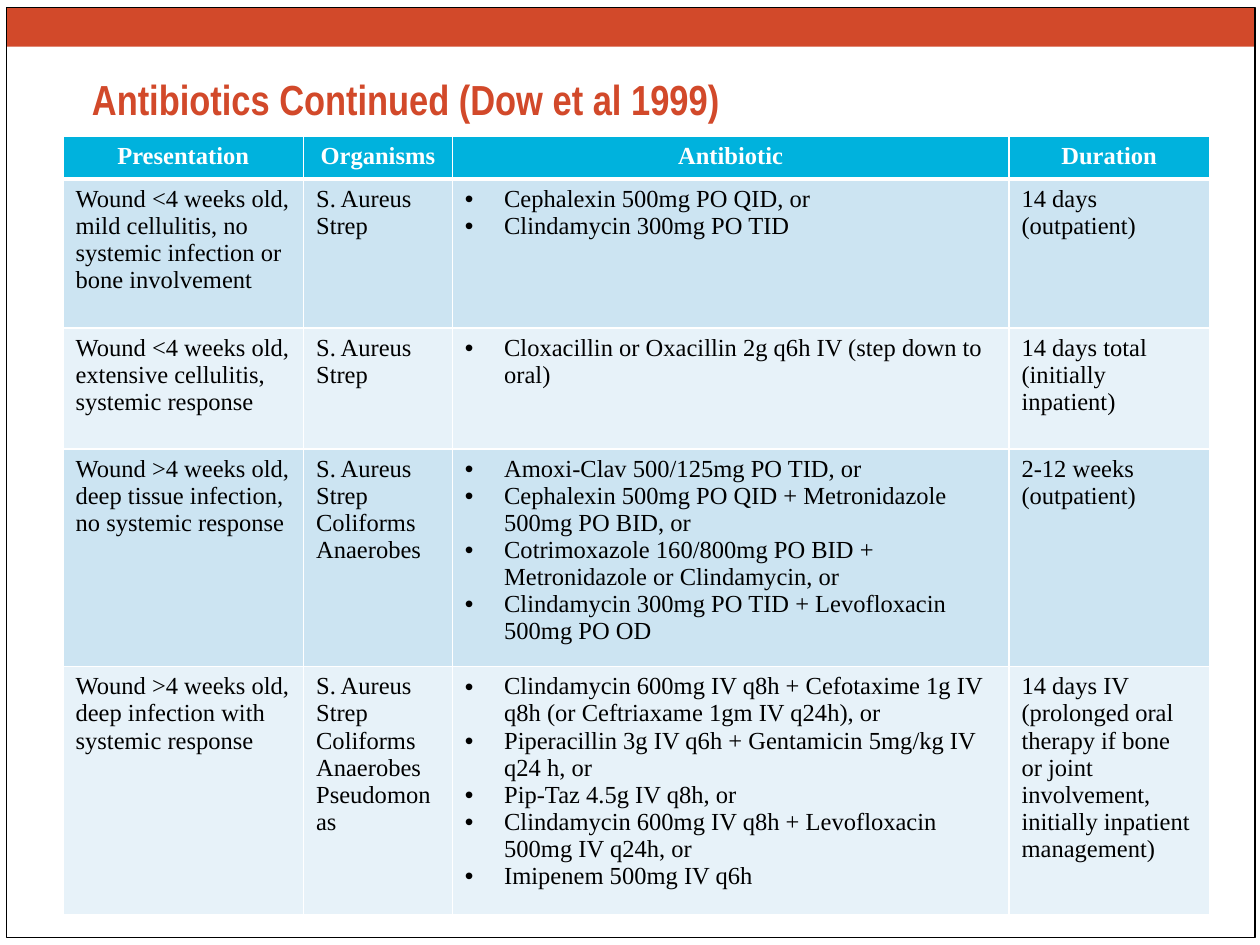
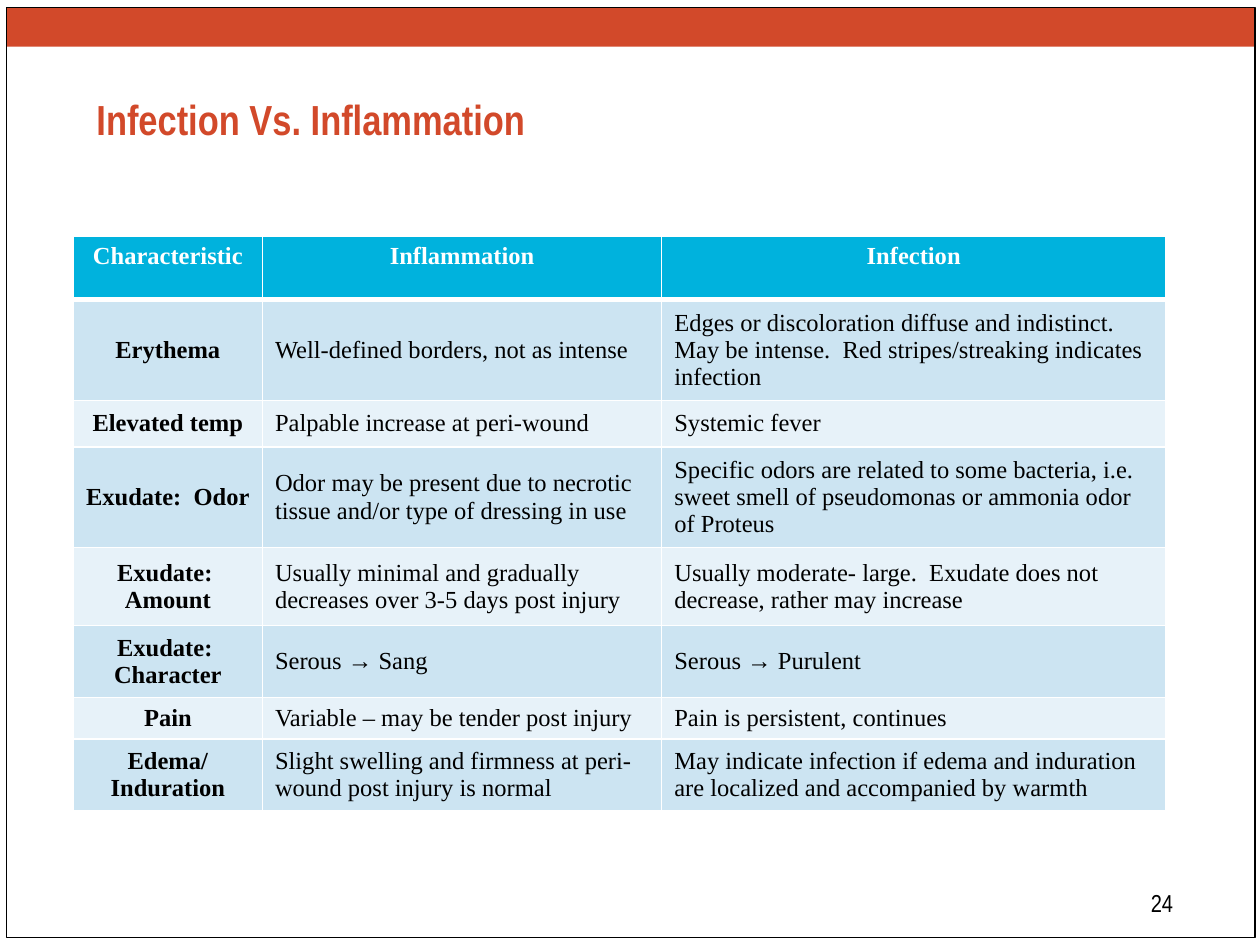
from collections import namedtuple

from lxml.etree import SubElement
from pptx import Presentation
from pptx.dml.color import RGBColor
from pptx.enum.shapes import MSO_SHAPE
from pptx.enum.text import MSO_ANCHOR, PP_ALIGN
from pptx.oxml.ns import qn
from pptx.util import Cm, Pt

# Shared look
RED = RGBColor(0xD2, 0x49, 0x2A)
BLACK = RGBColor(0x00, 0x00, 0x00)
WHITE = RGBColor(0xFF, 0xFF, 0xFF)
HEADER_BLUE = RGBColor(0x00, 0xB2, 0xDD)
BAND_FILLS = (RGBColor(0xCC, 0xE4, 0xF2), RGBColor(0xE7, 0xF2, 0xF9))
HEADING_FONT = "Arial Narrow"
TABLE_FONT = "Times New Roman"
BULLET_INDENT = Cm(0.79)
TITLE_ONLY = 5

# Lengths in centimetres
Box = namedtuple("Box", "left top width height")
FRAME = Box(0.13, 0.15, 25.17, 18.75)
BAND_HEIGHT = 0.79
PAGE_NUMBER = Box(18.62, 17.78, 5.28, 1.27)

# Antibiotics table: a tuple holds the paragraphs of one cell
ANTIBIOTIC_COLUMNS = (4.85, 3, 11.22, 4.04)
ANTIBIOTIC_ROWS = (0.86, 3, 2.44, 4.39, 5)
ANTIBIOTICS = (
    ("Presentation", "Organisms", "Antibiotic", "Duration"),
    (
        "Wound <4 weeks old, mild cellulitis, no systemic infection or bone involvement",
        ("S. Aureus", "Strep"),
        ("Cephalexin 500mg PO QID, or", "Clindamycin 300mg PO TID"),
        "14 days (outpatient)",
    ),
    (
        "Wound <4 weeks old, extensive cellulitis, systemic response",
        ("S. Aureus", "Strep"),
        "Cloxacillin or Oxacillin 2g q6h IV (step down to oral)",
        "14 days total (initially inpatient)",
    ),
    (
        "Wound >4 weeks old, deep tissue infection, no systemic response",
        ("S. Aureus", "Strep", "Coliforms", "Anaerobes"),
        (
            "Amoxi-Clav 500/125mg PO TID, or",
            "Cephalexin 500mg PO QID + Metronidazole 500mg PO BID, or",
            "Cotrimoxazole 160/800mg PO BID + Metronidazole or Clindamycin, or",
            "Clindamycin 300mg PO TID + Levofloxacin 500mg PO OD",
        ),
        "2-12 weeks (outpatient)",
    ),
    (
        "Wound >4 weeks old, deep infection with systemic response",
        ("S. Aureus", "Strep", "Coliforms", "Anaerobes", "Pseudomonas"),
        (
            "Clindamycin 600mg IV q8h + Cefotaxime 1g IV q8h (or Ceftriaxame 1gm IV q24h), or",
            "Piperacillin 3g IV q6h + Gentamicin 5mg/kg IV q24 h, or",
            "Pip-Taz 4.5g IV q8h, or",
            "Clindamycin 600mg IV q8h + Levofloxacin 500mg IV q24h, or",
            "Imipenem 500mg IV q6h",
        ),
        "14 days IV (prolonged oral therapy if bone or joint involvement, "
        "initially inpatient management)",
    ),
)

# Infection table
INFECTION_COLUMNS = (3.81, 8.05, 10.16)
INFECTION_ROWS = (1.27, 2.03, 0.94, 2.03, 1.57, 1.45, 0.84, 1.45)
INFECTION = (
    ("Characteristic", "Inflammation", "Infection"),
    (
        "Erythema",
        "Well-defined borders, not as intense",
        "Edges or discoloration diffuse and indistinct.  May be intense.  "
        "Red stripes/streaking indicates infection",
    ),
    ("Elevated temp", "Palpable increase at peri-wound", "Systemic fever"),
    (
        "Exudate:  Odor",
        "Odor may be present due to necrotic tissue and/or type of dressing in use",
        "Specific odors are related to some bacteria, i.e. sweet smell of "
        "pseudomonas or ammonia odor of Proteus",
    ),
    (
        "Exudate:  Amount",
        "Usually minimal and gradually decreases over 3-5 days post injury",
        "Usually moderate- large.  Exudate does not decrease, rather may increase",
    ),
    ("Exudate:  Character", "Serous → Sang", "Serous → Purulent"),
    ("Pain", "Variable – may be tender post injury", "Pain is persistent, continues"),
    (
        ("Edema/", "Induration"),
        "Slight swelling and firmness at peri-wound post injury is normal",
        "May indicate infection if edema and induration are localized and "
        "accompanied by warmth",
    ),
)


def lengths(box):
    return [Cm(value) for value in box]


def add_run(para, text, font, size, color, bold=False):
    span = para.add_run()
    span.text = text
    span.font.name = font
    span.font.size = Pt(size)
    span.font.color.rgb = color
    span.font.bold = bold


def add_frame(page, box):
    """Red band along the top of the box, thin outline around it."""
    band = page.shapes.add_shape(
        MSO_SHAPE.RECTANGLE, *lengths(box._replace(height=BAND_HEIGHT)))
    band.fill.solid()
    band.fill.fore_color.rgb = RED
    band.line.fill.background()
    outline = page.shapes.add_shape(MSO_SHAPE.RECTANGLE, *lengths(box))
    outline.fill.background()
    outline.line.color.rgb = BLACK
    outline.line.width = Pt(0.75)
    for shape in (band, outline):
        shape.shadow.inherit = False


def add_title(page, text, box):
    title = page.shapes.title
    title.left, title.top, title.width, title.height = lengths(box)
    title.text_frame.vertical_anchor = MSO_ANCHOR.MIDDLE
    para = title.text_frame.paragraphs[0]
    para.alignment = PP_ALIGN.LEFT
    add_run(para, text, HEADING_FONT, 24, RED, bold=True)


def add_page_number(page, number, box):
    frame = page.shapes.add_textbox(*lengths(box)).text_frame
    frame.word_wrap = True
    para = frame.paragraphs[0]
    para.alignment = PP_ALIGN.RIGHT
    add_run(para, str(number), HEADING_FONT, 14, BLACK)


def set_borders(cell, top, bottom):
    """White borders; widths in points."""
    properties = cell._tc.get_or_add_tcPr()
    for tag, width in (("lnL", 1), ("lnR", 1), ("lnT", top), ("lnB", bottom)):
        line = SubElement(properties, qn("a:" + tag), w=str(Pt(width)))
        fill = SubElement(line, qn("a:solidFill"))
        SubElement(fill, qn("a:srgbClr"), val=str(WHITE))


def add_bullet(para):
    properties = para._p.get_or_add_pPr()
    properties.set("marL", str(BULLET_INDENT))
    properties.set("indent", str(-BULLET_INDENT))
    SubElement(properties, qn("a:buFont"), typeface="Arial")
    SubElement(properties, qn("a:buChar"), char="•")


def fill_cell(cell, content, color, bold, centred, bulleted):
    paragraphs = (content,) if isinstance(content, str) else content
    frame = cell.text_frame
    for index, text in enumerate(paragraphs):
        para = frame.add_paragraph() if index else frame.paragraphs[0]
        para.alignment = PP_ALIGN.CENTER if centred else PP_ALIGN.LEFT
        if bulleted:
            add_bullet(para)
        add_run(para, text, TABLE_FONT, 14, color, bold)


def add_banded_table(page, left, top, rows, widths, heights,
                     bullet_column=None, label_column=None,
                     anchor=MSO_ANCHOR.TOP):
    box = Box(left, top, sum(widths), sum(heights))
    table = page.shapes.add_table(len(rows), len(widths), *lengths(box)).table
    for column, width in zip(table.columns, widths):
        column.width = Cm(width)
    for row, height in zip(table.rows, heights):
        row.height = Cm(height)
    for row_index, row in enumerate(rows):
        header = row_index == 0
        for column_index, content in enumerate(row):
            cell = table.cell(row_index, column_index)
            set_borders(cell, top=3 if row_index == 1 else 1,
                        bottom=3 if header else 1)
            cell.fill.solid()
            cell.fill.fore_color.rgb = (
                HEADER_BLUE if header else BAND_FILLS[(row_index - 1) % 2])
            cell.vertical_anchor = MSO_ANCHOR.TOP if header else anchor
            strong = header or column_index == label_column
            fill_cell(cell, content, WHITE if header else BLACK, strong, strong,
                      bulleted=not header and column_index == bullet_column)


def add_page(deck, title, title_box):
    page = deck.slides.add_slide(deck.slide_layouts[TITLE_ONLY])
    add_frame(page, FRAME)
    add_title(page, title, title_box)
    return page


def build_antibiotics(deck):
    page = add_page(deck, "Antibiotics Continued (Dow et al 1999)",
                    Box(1.6, 1.22, 21.59, 1.52))
    add_banded_table(page, 1.27, 2.75, ANTIBIOTICS, ANTIBIOTIC_COLUMNS,
                     ANTIBIOTIC_ROWS, bullet_column=2)


def build_infection(deck):
    page = add_page(deck, "Infection Vs. Inflammation",
                    Box(1.69, 1.63, 21.59, 1.52))
    add_banded_table(page, 1.48, 4.77, INFECTION, INFECTION_COLUMNS,
                     INFECTION_ROWS, label_column=0, anchor=MSO_ANCHOR.MIDDLE)
    add_page_number(page, 24, PAGE_NUMBER)


def main():
    deck = Presentation()
    deck.slide_width, deck.slide_height = Cm(25.4), Cm(19.05)
    build_antibiotics(deck)
    build_infection(deck)
    deck.save("out.pptx")


if __name__ == "__main__":
    main()
